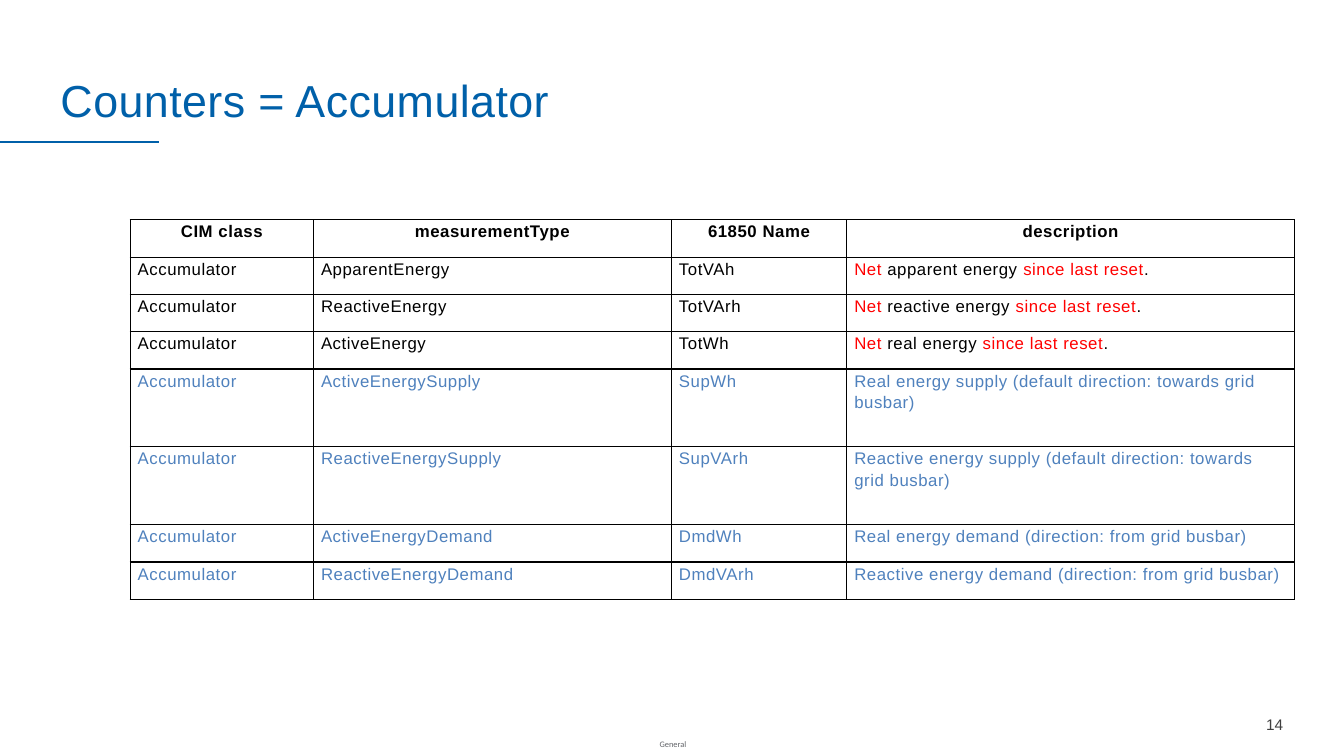
import pptx
import pptx.dml.color
import pptx.enum.shapes
import pptx.enum.text
import pptx.oxml
import pptx.oxml.ns
import pptx.util
from pptx.util import Cm

BLUE = pptx.dml.color.RGBColor(0x00, 0x60, 0xA9)
STEEL = pptx.dml.color.RGBColor(0x4F, 0x81, 0xBD)
RED = pptx.dml.color.RGBColor(0xFF, 0x00, 0x00)
BLACK = pptx.dml.color.RGBColor(0x00, 0x00, 0x00)
GREY = pptx.dml.color.RGBColor(0x62, 0x64, 0x69)
DARK_GREY = pptx.dml.color.RGBColor(0x40, 0x40, 0x40)
ALIGN = pptx.enum.text.PP_ALIGN
ANCHOR = pptx.enum.text.MSO_ANCHOR

COLUMN_WIDTHS = [4.62, 9.02, 4.42, 11.28]
ROW_HEIGHT, TALL_ROW_HEIGHT = 0.94, 1.96
HEADINGS = ["CIM class", "measurementType", "61850 Name", "description"]
# A description in several parts alternates between red and black.
NET_COUNTERS = [
    ("ApparentEnergy", "TotVAh", ["Net ", "apparent energy ", "since last reset", "."]),
    ("ReactiveEnergy", "TotVArh", ["Net", " reactive energy", " since last reset", "."]),
    ("ActiveEnergy", "TotWh", ["Net", " real energy", " since last reset", "."]),
]
DIRECTED_COUNTERS = [
    ("ActiveEnergySupply", "SupWh",
     "Real energy supply (default direction: towards grid busbar)"),
    ("ReactiveEnergySupply", "SupVArh",
     "Reactive energy supply (default direction: towards grid busbar)"),
    ("ActiveEnergyDemand", "DmdWh", "Real energy demand (direction: from grid busbar)"),
    ("ReactiveEnergyDemand", "DmdVArh",
     "Reactive energy demand (direction: from grid busbar)"),
]


def format_font(font, size, color, name="Arial", bold=False, spacing=0):
    """Format a font; spacing between letters is in hundredths of a point."""
    font.size = pptx.util.Pt(size)
    font.name = name
    font.bold = bold
    font.color.rgb = color
    if spacing:
        font._rPr.set("spc", str(spacing))


def add_title(slide, text, left, top, width, height):
    title = slide.shapes.title
    title.left, title.top, title.width, title.height = left, top, width, height
    frame = title.text_frame
    frame.text = text
    frame.word_wrap = True
    frame.vertical_anchor = ANCHOR.BOTTOM
    paragraph = frame.paragraphs[0]
    paragraph.alignment = ALIGN.LEFT
    paragraph.line_spacing = 0.9
    format_font(paragraph.font, 32, BLUE, spacing=30)


def add_title_rule(slide, left, top, width):
    rule = slide.shapes.add_connector(
        pptx.enum.shapes.MSO_CONNECTOR.STRAIGHT, left, top, left + width, top)
    rule.line.color.rgb = BLUE
    rule.line.width = pptx.util.Pt(1.5)
    rule._element.spPr.append(pptx.oxml.parse_xml(
        f"<a:effectLst {pptx.oxml.ns.nsdecls('a')}/>"))


def add_label(slide, text, left, top, width, height, size, color, name, alignment,
              inset=0):
    frame = slide.shapes.add_textbox(left, top, width, height).text_frame
    frame.margin_left = frame.margin_right = inset
    frame.margin_top = frame.margin_bottom = 0
    frame.vertical_anchor = ANCHOR.MIDDLE
    frame.word_wrap = inset > 0
    paragraph = frame.paragraphs[0]
    paragraph.text = text
    paragraph.alignment = alignment
    format_font(paragraph.font, size, color, name)


def add_borders(cell):
    for side in ("lnL", "lnR", "lnT", "lnB"):
        cell._tc.get_or_add_tcPr().append(pptx.oxml.parse_xml(
            f"<a:{side} {pptx.oxml.ns.nsdecls('a')} w='12700'>"
            f"<a:solidFill><a:srgbClr val='{BLACK}'/></a:solidFill></a:{side}>"))


def fill_cell(cell, content, color, is_heading):
    add_borders(cell)
    cell.fill.background()
    cell.margin_left = cell.margin_right = Cm(0.19)
    cell.margin_top = cell.margin_bottom = 0
    paragraph = cell.text_frame.paragraphs[0]
    paragraph.alignment = ALIGN.CENTER if is_heading else ALIGN.LEFT
    paragraph.line_spacing = 1.15
    paragraph.space_after = pptx.util.Pt(3)
    format_font(paragraph.font, 12, color, bold=is_heading, spacing=40)
    if isinstance(content, str):
        paragraph.add_run().text = content
        return
    for index, part in enumerate(content):
        run = paragraph.add_run()
        run.text = part
        run.font.color.rgb = BLACK if index % 2 else RED


def add_counter_table(slide, left, top):
    rows = [(HEADINGS, BLACK)]
    for counters, color in ((NET_COUNTERS, BLACK), (DIRECTED_COUNTERS, STEEL)):
        rows += [(("Accumulator", *counter), color) for counter in counters]
    heights = [TALL_ROW_HEIGHT if "towards" in contents[-1] else ROW_HEIGHT
               for contents, _ in rows]
    table = slide.shapes.add_table(
        len(rows), len(COLUMN_WIDTHS), left, top,
        Cm(sum(COLUMN_WIDTHS)), Cm(sum(heights))).table
    table.first_row = table.horz_banding = False
    for column, width in zip(table.columns, COLUMN_WIDTHS):
        column.width = Cm(width)
    for row_index, (contents, color) in enumerate(rows):
        table.rows[row_index].height = Cm(heights[row_index])
        for column_index, content in enumerate(contents):
            fill_cell(table.cell(row_index, column_index), content, color,
                      row_index == 0)


def add_footer(slide):
    add_label(slide, "General", Cm(16.59), Cm(18.62), Cm(0.74), Cm(0.25),
              6, GREY, "Calibri", ALIGN.CENTER)
    add_label(slide, "14", Cm(30.38), Cm(17.75), Cm(2.21), Cm(1.02),
              11, DARK_GREY, "Arial", ALIGN.RIGHT, inset=Cm(0.25))


def main():
    presentation = pptx.Presentation()
    presentation.slide_width, presentation.slide_height = Cm(33.87), Cm(19.05)
    slide = presentation.slides.add_slide(presentation.slide_layouts.get_by_name("Title Only"))
    add_title(slide, "Counters = Accumulator", Cm(1.27), Cm(1.07), Cm(31.32), Cm(2.26))
    add_title_rule(slide, Cm(0), Cm(3.58), Cm(4))
    add_counter_table(slide, Cm(3.28), Cm(5.54))
    add_footer(slide)
    presentation.save("out.pptx")


if __name__ == "__main__":
    main()
